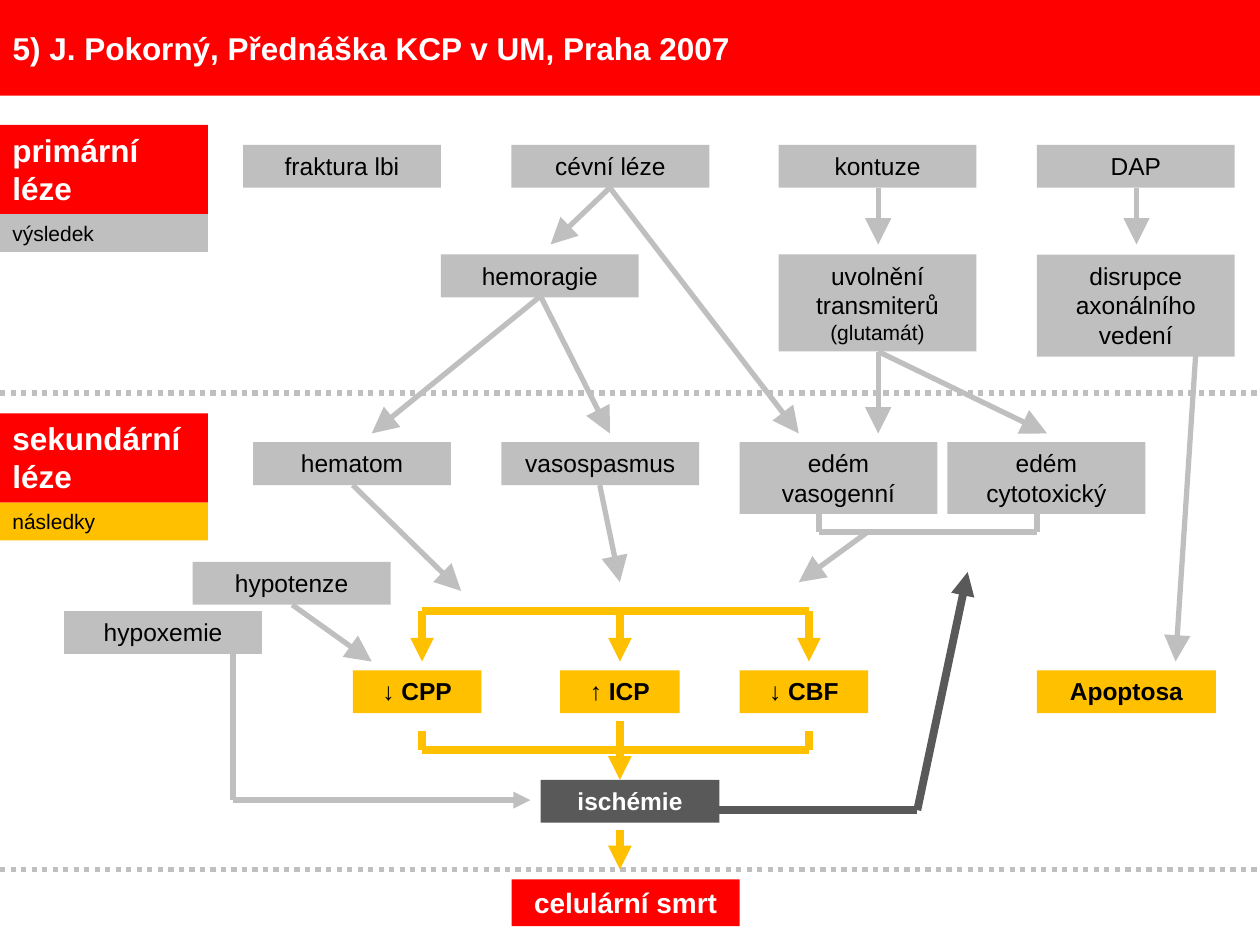
from lxml.etree import SubElement
from pptx import Presentation
from pptx.dml.color import RGBColor
from pptx.enum.dml import MSO_LINE_DASH_STYLE as DASH
from pptx.enum.shapes import MSO_CONNECTOR as CONN, MSO_SHAPE as SHAPE
from pptx.enum.text import MSO_ANCHOR as ANCHOR, MSO_AUTO_SIZE as FIT, PP_ALIGN as ALIGN
from pptx.oxml.ns import qn
from pptx.util import Inches, Pt

W, H = 10, 7.5
RED, GREY, GOLD, DARK = "FF0000", "BFBFBF", "FFC000", "595959"
BLACK, WHITE = "000000", "FFFFFF"

# Tops of the rows and lefts and centres of the columns, in inches
CAUSE, EFFECT, SECOND, RESULT = 1.15, 2.02, 3.51, 5.32
VESSEL, CONTUSION, AXON = 4.06, 6.18, 8.23
CPP, ICP, CBF = 3.35, 4.92, 6.42
BOX_W, BOX_H, LABEL_W = 1.57, 0.34, 1.65

PLAIN = dict(size=Pt(14), bold=False)
BOLD = dict(size=Pt(14), bold=True)
SMALL = dict(size=Pt(12), bold=False)
HEAD = dict(size=Pt(18), bold=True)
BIG = dict(size=Pt(16), bold=True)

# Text, left, top, height
GREY_BOXES = [
    ("fraktura lbi", 1.93, CAUSE, BOX_H),
    ("cévní léze", VESSEL, CAUSE, BOX_H),
    ("kontuze", CONTUSION, CAUSE, BOX_H),
    ("DAP", AXON, CAUSE, BOX_H),
    ("hemoragie", 3.5, EFFECT, BOX_H),
    ("disrupce axonálního vedení", AXON, EFFECT, 0.81),
    ("hematom", 2.01, SECOND, BOX_H),
    ("vasospasmus", 3.98, SECOND, BOX_H),
    ("edém vasogenní", 5.87, SECOND, 0.57),
    ("edém cytotoxický", 7.52, SECOND, 0.57),
    ("hypotenze", 1.53, 4.46, BOX_H),
    ("hypoxemie", 0.51, 4.85, BOX_H),
]

# Text, centre, width
GOLD_BOXES = [
    ("↓ CPP", 3.31, 1.02),
    ("↑ ICP", ICP, 0.95),
    ("↓ CBF", 6.38, 1.02),
    ("Apoptosa", 8.94, 1.42),
]

# Heading, note, colour of the note, top
STAGES = [
    ("primární léze", "výsledek", GREY, 0.99),
    ("sekundární léze", "následky", GOLD, 3.28),
]

# Starting point and the points its arrows lead to
GREY_ARROWS = [
    ((4.84, 1.49), [(4.37, 1.94), (6.34, 3.44)]),
    ((6.97, 1.49), [(6.97, 1.94)]),
    ((9.02, 1.49), [(9.02, 1.94)]),
    ((4.29, 2.35), [(2.95, 3.44), (4.84, 3.44)]),
    ((6.97, 2.79), [(6.97, 3.44), (8.31, 3.44)]),
    ((6.89, 4.22), [(6.34, 4.62)]),
    ((4.76, 3.85), [(4.92, 4.62)]),
    ((2.8, 3.85), [(3.66, 4.69)]),
    ((2.32, 4.8), [(2.95, 5.25)]),
    ((9.49, 2.81), [(9.33, 5.25)]),
]

# Points, colour, width, ends in an arrowhead
PATHS = [
    ([(CPP, 5.8), (CPP, 5.95), (CBF, 5.95), (CBF, 5.8)], GOLD, 4.5, False),
    ([(CPP, 4.85), (CBF, 4.85)], GOLD, 4.5, False),
    *[([(x, 4.85), (x, 5.25)], GOLD, 4.5, True) for x in (CPP, ICP, CBF)],
    ([(ICP, 5.72), (ICP, 6.19)], GOLD, 4.5, True),
    ([(ICP, 6.59), (ICP, 6.9)], GOLD, 4.5, True),
    ([(6.5, 4.06), (6.5, 4.22), (8.23, 4.22), (8.23, 4.06)], GREY, 3.5, False),
    ([(1.85, 5.09), (1.85, 6.35), (4.21, 6.35)], GREY, 3.25, True),
    ([(5.71, 6.43), (7.28, 6.43), (7.68, 4.54)], DARK, 4.5, True),
]


def paint(fmt, color):
    fmt.solid()
    fmt.fore_color.rgb = RGBColor.from_string(color)


def add_run(p, text, color, style):
    r = p.add_run()
    r.text = text
    r.font.name = "Arial"
    paint(r.font.fill, color)
    for key, value in style.items():
        setattr(r.font, key, value)


def add_box(s, at, fill, runs, color=BLACK, align=ALIGN.CENTER):
    sp = s.shapes.add_shape(SHAPE.RECTANGLE, *map(Inches, at))
    sp.shadow.inherit = False
    paint(sp.fill, fill)
    sp.line.fill.background()
    tf = sp.text_frame
    frame = dict(word_wrap=True, auto_size=FIT.SHAPE_TO_FIT_TEXT, vertical_anchor=ANCHOR.TOP)
    for key, value in frame.items():
        setattr(tf, key, value)
    p = tf.paragraphs[0]
    p.alignment = align
    for text, style in runs:
        add_run(p, text, color, style)


def add_line(s, start, end, color, width, head=None, dash=None):
    ln = s.shapes.add_connector(CONN.STRAIGHT, *map(Inches, start + end))
    paint(ln.line.fill, color)
    ln.line.width = Pt(width)
    if dash:
        ln.line.dash_style = dash
    if head:
        SubElement(ln.line._get_or_add_ln(), qn("a:tailEnd"), type="triangle", w=head, len=head)
    SubElement(ln._element.spPr, qn("a:effectLst"))


def add_path(s, points, color, width, arrow):
    legs = list(zip(points, points[1:]))
    for i, (start, end) in enumerate(legs, 1):
        add_line(s, start, end, color, width, "med" if arrow and i == len(legs) else None)


def add_title(s, text):
    sp = s.shapes.title
    place = dict(left=0, top=0, width=Inches(W), height=Inches(0.76))
    for key, value in place.items():
        setattr(sp, key, value)
    paint(sp.fill, RED)
    tf = sp.text_frame
    frame = dict(word_wrap=True, auto_size=FIT.NONE, vertical_anchor=ANCHOR.MIDDLE)
    for key, value in frame.items():
        setattr(tf, key, value)
    p = tf.paragraphs[0]
    p.alignment = ALIGN.LEFT
    add_run(p, text, WHITE, HEAD)


def main():
    prs = Presentation()
    prs.slide_width, prs.slide_height = Inches(W), Inches(H)
    s = prs.slides.add_slide(prs.slide_layouts[5])
    add_title(s, "5) J. Pokorný, Přednáška KCP v UM, Praha 2007")

    # Dotted borders between the stages
    for y in (3.12, 6.9):
        add_line(s, (0, y), (W, y), GREY, 3, dash=DASH.ROUND_DOT)

    # Brackets and arrows
    for path in PATHS:
        add_path(s, *path)
    for start, ends in GREY_ARROWS:
        for end in ends:
            add_line(s, start, end, GREY, 3, "lg")

    # Stage labels at the left edge
    for heading, note, fill, top in STAGES:
        add_box(s, (0, top, LABEL_W, 0.71), RED, [(heading, HEAD)], WHITE, ALIGN.LEFT)
        add_box(s, (0, top + 0.71, LABEL_W, 0.3), fill, [(note, SMALL)], align=ALIGN.LEFT)

    # Causes and their effects
    for text, left, top, height in GREY_BOXES:
        add_box(s, (left, top, BOX_W, height), GREY, [(text, PLAIN)])
    add_box(s, (CONTUSION, EFFECT, BOX_W, 0.77), GREY,
            [("uvolnění transmiterů ", PLAIN), ("(glutamát)", SMALL)])

    # Results
    for text, centre, width in GOLD_BOXES:
        add_box(s, (centre - width / 2, RESULT, width, BOX_H), GOLD, [(text, BOLD)])
    add_box(s, (4.29, 6.19, 1.42, BOX_H), DARK, [("ischémie", BOLD)], WHITE)
    add_box(s, (4.06, 6.98, 1.81, 0.37), RED, [("celulární smrt", BIG)], WHITE)

    prs.save("out.pptx")


if __name__ == "__main__":
    main()
